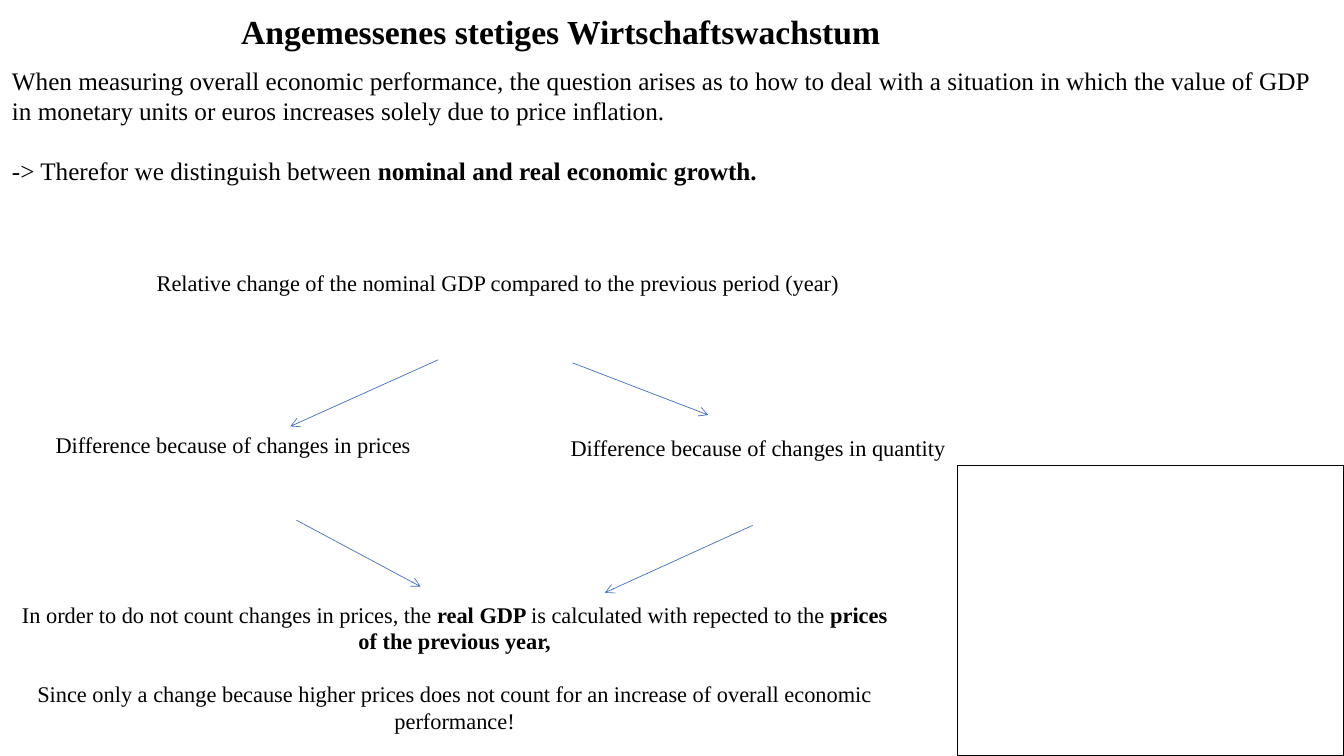
from lxml import etree
from pptx import Presentation
from pptx.dml.color import RGBColor
from pptx.enum.shapes import MSO_CONNECTOR, MSO_SHAPE
from pptx.enum.text import MSO_ANCHOR, MSO_AUTO_SIZE, PP_ALIGN
from pptx.oxml.ns import qn
from pptx.util import Inches, Pt

BLACK = RGBColor(0x00, 0x00, 0x00)
BLUE = RGBColor(0x44, 0x72, 0xC4)
STRAIGHT = MSO_CONNECTOR.STRAIGHT
RECTANGLE = MSO_SHAPE.RECTANGLE
TOP, MIDDLE = MSO_ANCHOR.TOP, MSO_ANCHOR.MIDDLE
GROW = MSO_AUTO_SIZE.SHAPE_TO_FIT_TEXT
LEFT, CENTER = PP_ALIGN.LEFT, PP_ALIGN.CENTER


class GrowthSlide:
    font_name = "Times New Roman"
    grid_columns = 100
    grid_rows = 100

    def __init__(self, presentation):
        self.slide = presentation.slides.add_slide(presentation.slide_layouts[6])
        self.column = presentation.slide_width / self.grid_columns
        self.row = presentation.slide_height / self.grid_rows

    def place(self, across, down):
        return round(across * self.column), round(down * self.row)

    def text(self, left, top, width, height, paragraphs, size=16,
             align=CENTER, anchor=TOP, gap=0):
        box = self.slide.shapes.add_textbox(*self.place(left, top), *self.place(width, height))
        frame = box.text_frame
        frame.word_wrap = True
        frame.auto_size = GROW
        frame.vertical_anchor = anchor
        for index, runs in enumerate(paragraphs):
            paragraph = frame.paragraphs[0]
            if index:
                paragraph = frame.add_paragraph()
                paragraph.space_before = Pt(gap)
            paragraph.alignment = align
            paragraph.font.name = self.font_name
            paragraph.font.size = Pt(size)
            paragraph.font.color.rgb = BLACK
            for words, bold in runs:
                run = paragraph.add_run()
                run.text = words
                run.font.bold = bold

    def arrow(self, start, end):
        connector = self.slide.shapes.add_connector(
            STRAIGHT, *self.place(*start), *self.place(*end))
        connector.line.color.rgb = BLUE
        connector.line.width = Pt(0.5)
        etree.SubElement(connector.line._get_or_add_ln(), qn("a:tailEnd"), type="arrow")
        etree.SubElement(connector._element.spPr, qn("a:effectLst"))

    def frame(self, left, top, width, height):
        shape = self.slide.shapes.add_shape(
            RECTANGLE, *self.place(left, top), *self.place(width, height))
        shape.shadow.inherit = False
        shape.fill.background()
        shape.line.color.rgb = BLACK
        shape.line.width = Pt(1)


def main():
    presentation = Presentation()
    presentation.slide_width = Inches(13.33)
    presentation.slide_height = Inches(7.5)
    growth = GrowthSlide(presentation)

    growth.text(0.15, 34.93, 73.8, 4.8, [[
        ("Relative change of the nominal GDP compared to the previous period (year)", False)]])
    for left, top, cause in [(0.75, 56.4, "prices"), (39.8, 56.8, "quantity")]:
        growth.text(left, top, 33.2, 4.8, [[
            (f"Difference because of changes in {cause}", False)]])
    growth.text(0.15, 78.8, 67.35, 19.2, [
        [("In order to do not count changes in prices, the ", False),
         ("real GDP ", True),
         ("is calculated with repected to the ", False),
         ("prices of the previous year,", True)],
        [("Since only a change because higher prices does not count for an increase "
          "of overall economic performance!", False)],
    ], gap=18.5)

    for start, end in [
        ((32.6, 47.6), (21.6, 56.4)),
        ((42.6, 48), (52.7, 54.9)),
        ((56, 69.5), (45, 78.4)),
        ((22.05, 68.8), (31.3, 77.6)),
    ]:
        growth.arrow(start, end)

    growth.frame(71.25, 61.6, 28.75, 38.4)
    growth.text(0.15, 8, 99.85, 17.5, [
        [("When measuring overall economic performance, the question arises as to how to "
          "deal with a situation in which the value of GDP in monetary units or euros "
          "increases solely due to price inflation.", False)],
        [("-> Therefor we distinguish between ", False),
         ("nominal and real economic growth.", True)],
    ], size=18, align=LEFT, gap=21)
    growth.text(17.2, 0.67, 59.9, 6.8, [[
        ("Angemessenes stetiges Wirtschaftswachstum", True)]],
        size=24, align=LEFT, anchor=MIDDLE)

    presentation.save("out.pptx")


if __name__ == "__main__":
    main()
